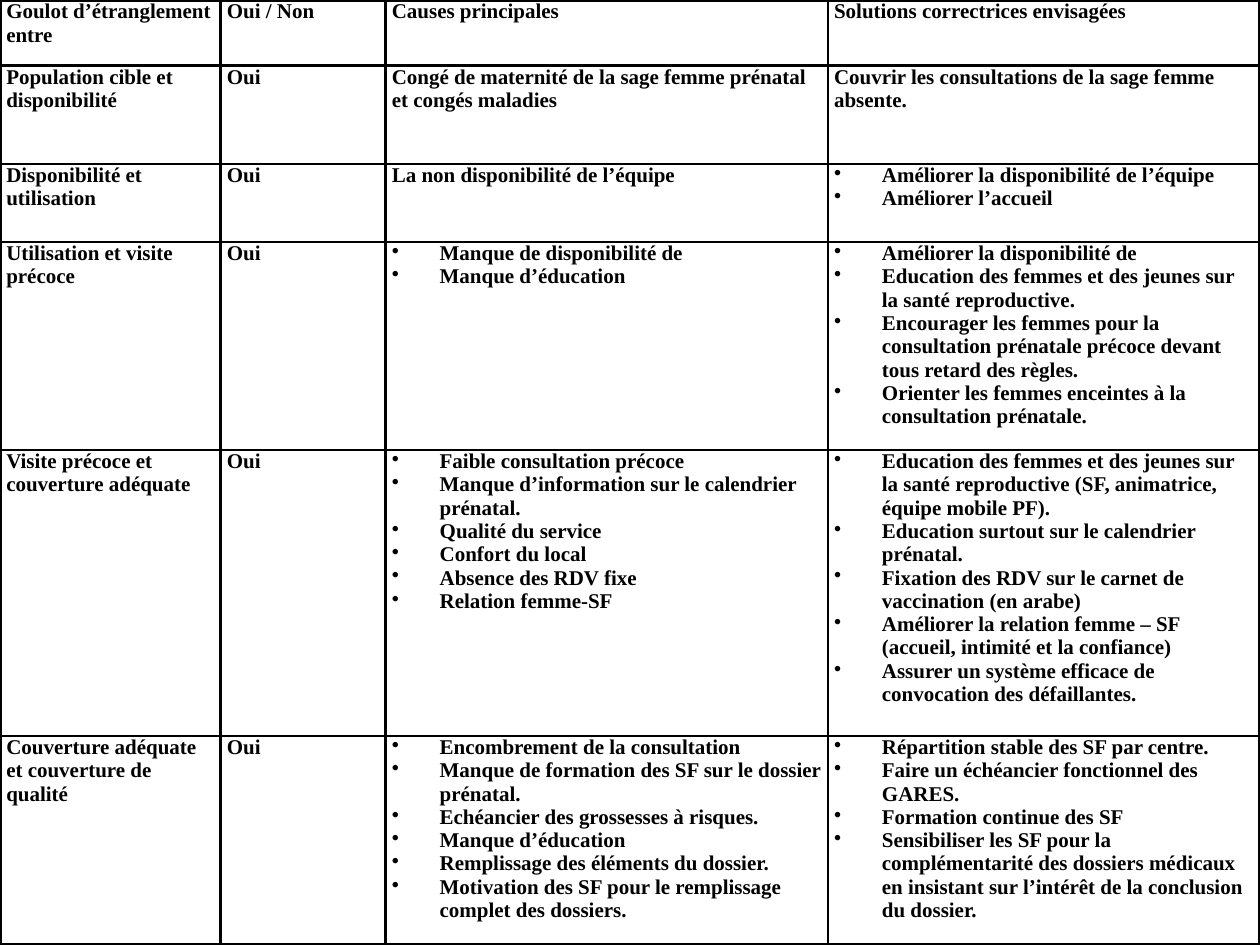
from lxml.etree import SubElement
from pptx import Presentation
from pptx.dml.color import RGBColor
from pptx.oxml.ns import qn
from pptx.util import Pt

COLORS = {"ink": "000000"}
FONT = "Times New Roman"
COLUMN_WIDTHS = [126, 94.32, 252.72, 246.96]
ROW_HEIGHTS = [37.44, 56.16, 44.64, 118.8, 163.44, 119.52]
OUTER_LINE, INNER_LINE = 2.25, 1.5
HANGING = 27.36
TAB_STOP = 18

# A list in a cell is bulleted; a string is plain text.
ROWS = [
    ["Goulot d’étranglement\nentre", "Oui / Non", "Causes principales",
     "Solutions correctrices envisagées"],
    ["Population cible et disponibilité", "Oui",
     "Congé de maternité de la sage femme prénatal et congés maladies",
     "Couvrir les consultations de la sage femme absente."],
    ["Disponibilité et utilisation", "Oui", "La non disponibilité de l’équipe",
     ["Améliorer la disponibilité de l’équipe", "Améliorer l’accueil"]],
    ["Utilisation et visite précoce", "Oui",
     ["Manque de disponibilité de", "Manque d’éducation"],
     ["Améliorer la disponibilité de",
      "Education des femmes et des jeunes sur la santé reproductive.",
      "Encourager les femmes pour la consultation prénatale précoce devant tous retard des règles.",
      "Orienter les femmes enceintes à la consultation prénatale."]],
    ["Visite précoce et couverture adéquate", "Oui",
     ["Faible consultation précoce",
      "Manque d’information sur le calendrier prénatal.",
      "Qualité du service",
      "Confort du local",
      "Absence des RDV fixe",
      "Relation femme-SF"],
     ["Education des femmes et des jeunes sur la santé reproductive (SF, animatrice, équipe mobile PF).",
      "Education surtout sur le calendrier prénatal.",
      "Fixation des RDV sur le carnet de vaccination (en arabe)",
      "Améliorer la relation femme – SF (accueil, intimité et la confiance)",
      "Assurer un système efficace de convocation des défaillantes."]],
    ["Couverture adéquate et couverture de qualité", "Oui",
     ["Encombrement de la consultation",
      "Manque de formation des SF sur le dossier prénatal.",
      "Echéancier des grossesses à risques.",
      "Manque d’éducation",
      "Remplissage des éléments du dossier.",
      "Motivation des SF pour le remplissage complet des dossiers."],
     ["Répartition stable des SF par centre.",
      "Faire un échéancier fonctionnel des GARES.",
      "Formation continue des SF",
      "Sensibiliser les SF pour la complémentarité des dossiers médicaux en insistant sur l’intérêt de la conclusion du dossier."]],
]


def add_bullet(para):
    properties = para._p.get_or_add_pPr()
    properties.set("marL", str(Pt(HANGING)))
    properties.set("indent", str(-Pt(HANGING)))
    SubElement(properties, qn("a:buChar"), char="•")
    tabs = SubElement(properties, qn("a:tabLst"))
    SubElement(tabs, qn("a:tab"), pos=str(Pt(TAB_STOP)), algn="l")


def add_borders(cell, outer_sides):
    """Draw the four cell borders, with the heavier line on the table's outer sides."""
    properties = cell._tc.get_or_add_tcPr()
    for side, is_outer in outer_sides.items():
        width = OUTER_LINE if is_outer else INNER_LINE
        line = SubElement(properties, qn(f"a:ln{side}"), w=str(Pt(width)))
        fill = SubElement(line, qn("a:solidFill"))
        SubElement(fill, qn("a:srgbClr"), val=COLORS["ink"])


deck = Presentation()
deck.slide_width, deck.slide_height = Pt(720), Pt(540)
page = deck.slides.add_slide(deck.slide_layouts[6])

last_row, last_column = len(ROWS) - 1, len(COLUMN_WIDTHS) - 1
table = page.shapes.add_table(len(ROWS), len(COLUMN_WIDTHS), 0, 0, Pt(720), Pt(540)).table
table.first_row = table.horz_banding = False
for column, width in zip(table.columns, COLUMN_WIDTHS):
    column.width = Pt(width)
for row, height in zip(table.rows, ROW_HEIGHTS):
    row.height = Pt(height)

for r, entries in enumerate(ROWS):
    for c, entry in enumerate(entries):
        cell = table.cell(r, c)
        cell.margin_left = cell.margin_right = Pt(3.6)
        cell.margin_top = cell.margin_bottom = 0
        add_borders(cell, {"L": c == 0, "R": c == last_column,
                           "T": r == 0, "B": r == last_row})
        cell.fill.background()
        bulleted = isinstance(entry, list)
        cell.text_frame.text = "\n".join(entry) if bulleted else entry
        for para in cell.text_frame.paragraphs:
            if bulleted:
                add_bullet(para)
            for span in para.runs:
                span.font.name = FONT
                span.font.size = Pt(12)
                span.font.bold = True
                span.font.color.rgb = RGBColor.from_string(COLORS["ink"])

deck.save("out.pptx")
